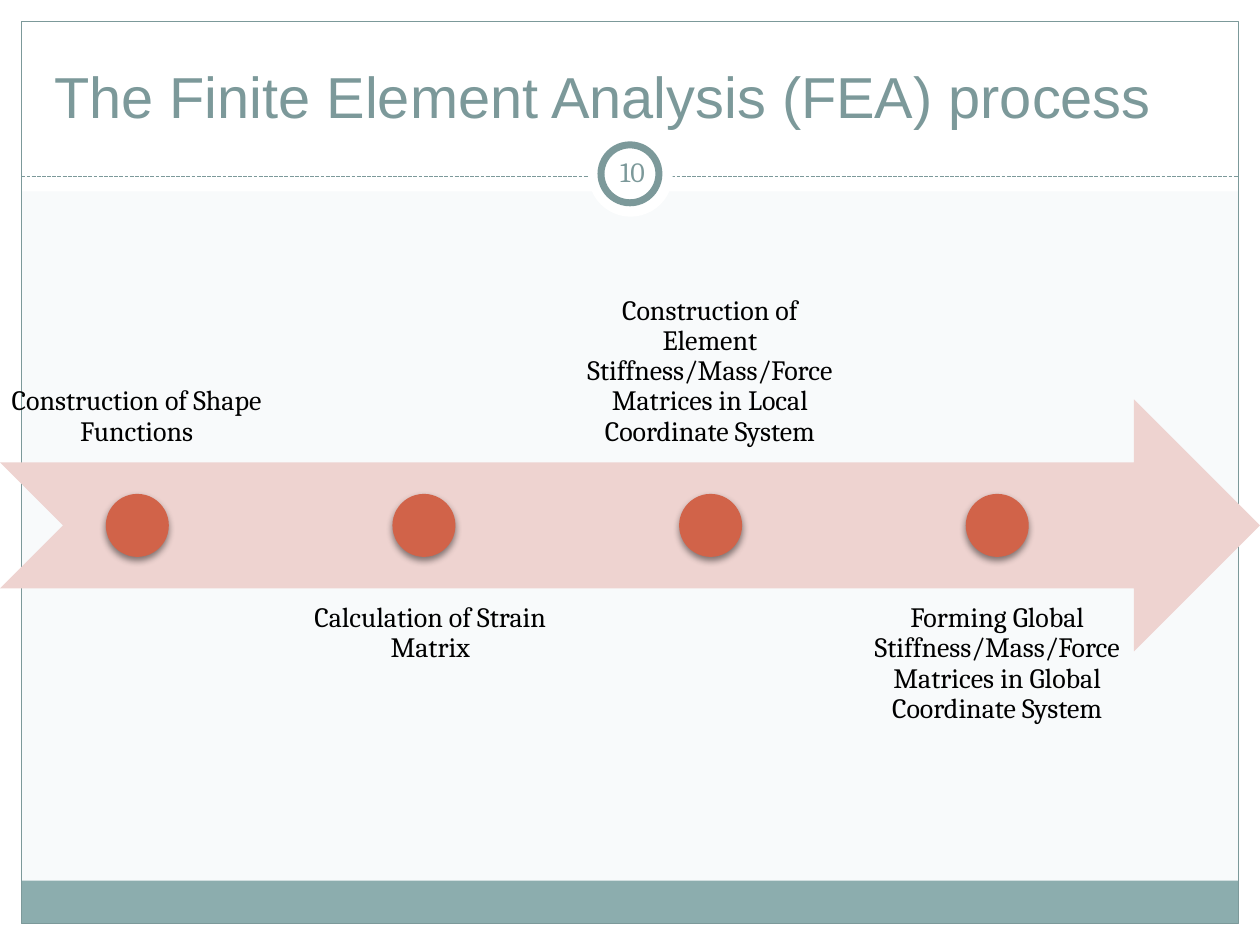
import pptx
import pptx.util
import pptx.dml.color
import pptx.enum.dml
import pptx.enum.shapes
import pptx.enum.text
import pptx.oxml
import pptx.oxml.ns
import lxml.etree

Inches = pptx.util.Inches
Pt = pptx.util.Pt
SHAPE = pptx.enum.shapes.MSO_SHAPE
ANCHOR = pptx.enum.text.MSO_ANCHOR
ALIGN = pptx.enum.text.PP_ALIGN
qn = pptx.oxml.ns.qn

COLORS = {
    "background": "F8FAFB",
    "white": "FFFFFF",
    "footer": "8CADAE",
    "accent": "7C999A",
    "arrow": "EED3D0",
    "dot": "D16349",
    "text": "000000",
}

STEPS = [
    (0, "Construction of Shape Functions"),
    (2.33, "Calculation of Strain Matrix"),
    (4.55, "Construction of Element Stiffness/Mass/Force Matrices in Local Coordinate System"),
    (6.83, "Forming Global Stiffness/Mass/Force Matrices in Global Coordinate System"),
]


def rgb(name):
    return pptx.dml.color.RGBColor.from_string(COLORS[name])


def add_shape(shapes, kind, box, fill=None, line=None, width=0.75):
    sp = shapes.add_shape(kind, *map(Inches, box))
    sp.shadow.inherit = False
    if fill:
        sp.fill.solid()
        sp.fill.fore_color.rgb = rgb(fill)
    else:
        sp.fill.background()
    if line:
        sp.line.color.rgb = rgb(line)
        sp.line.width = Pt(width)
    else:
        sp.line.fill.background()
    return sp


def add_run(p, text, size, font, color):
    r = p.add_run()
    r.text = text
    r.font.size = Pt(size)
    r.font.name = font
    r.font.color.rgb = rgb(color)


def add_text(shapes, box, text, color, anchor, insets):
    tf = shapes.add_textbox(*map(Inches, box)).text_frame
    tf.word_wrap = True
    tf.vertical_anchor = anchor
    tf.margin_left, tf.margin_top, tf.margin_right, tf.margin_bottom = map(Inches, insets)
    p = tf.paragraphs[0]
    p.alignment = ALIGN.CENTER
    add_run(p, text, 16, "Cambria", color)
    return p


def add_drop_shadow(sp):
    effects = sp._element.spPr.find(qn("a:effectLst"))
    shadow = lxml.etree.SubElement(
        effects, qn("a:outerShdw"), blurRad=str(Pt(4)), dist=str(Pt(2)),
        dir="5400000", rotWithShape="0")
    color = lxml.etree.SubElement(shadow, qn("a:srgbClr"), val=COLORS["text"])
    lxml.etree.SubElement(color, qn("a:alpha"), val="45000")


def build_frame(s, width, height):
    margin = 0.17
    right, bottom = width - margin, height - margin
    inner = width - 2 * margin
    for box in [(0, bottom, width, margin), (0, 0, width, 1.52),
                (0, 0, margin, height), (right, 0, margin, height)]:
        add_shape(s.shapes, SHAPE.RECTANGLE, box, "white")
    add_shape(s.shapes, SHAPE.RECTANGLE, (margin, 6.99, inner, 0.34), "footer")
    add_shape(s.shapes, SHAPE.RECTANGLE, (margin, margin, inner, bottom - margin), line="accent")
    rule = s.shapes.add_connector(
        pptx.enum.shapes.MSO_CONNECTOR.STRAIGHT,
        Inches(margin), Inches(1.4), Inches(right), Inches(1.4))
    rule.line.color.rgb = rgb("accent")
    rule.line.width = Pt(0.75)
    rule.line.dash_style = pptx.enum.dml.MSO_LINE.SQUARE_DOT
    lxml.etree.SubElement(rule._element.spPr, qn("a:effectLst"))


def build_title(s, box, text):
    title = s.shapes.title
    title.left, title.top, title.width, title.height = map(Inches, box)
    s.shapes._spTree.append(title._element)
    tf = title.text_frame
    tf.word_wrap = True
    tf.auto_size = pptx.enum.text.MSO_AUTO_SIZE.NONE
    tf.vertical_anchor = ANCHOR.BOTTOM
    p = tf.paragraphs[0]
    p.alignment = ALIGN.LEFT
    add_run(p, text, 33, "Arial", "accent")


def build_page_badge(s, box, number):
    left, top, size = box
    add_shape(s.shapes, SHAPE.OVAL, (left, top, size, size), "white")
    ring = size - 0.21
    add_shape(s.shapes, SHAPE.OVAL, (left + 0.1, top + 0.1, ring, ring), "white", "accent", 4)
    add_text(s.shapes, (left + 0.1, top + 0.07, 0.5, 0.48), number, "accent",
             ANCHOR.MIDDLE, (0.05, 0.05, 0.05, 0.05))


def build_process(s, box, steps):
    left, top, width, height = box
    band = height / 3
    dot = band / 4
    pitch = 2.275
    group = s.shapes.add_group_shape()
    add_shape(group.shapes, SHAPE.NOTCHED_RIGHT_ARROW, (left, top + band * 0.75, width, band), "arrow")
    for i, (x, text) in enumerate(steps):
        above = i % 2 == 0
        y = top - band * 0 if above else top + band * 1.5
        y = y if not above else top
        p = add_text(group.shapes, (left + x, y, 2.17, band), text, "text",
                     ANCHOR.BOTTOM if above else ANCHOR.TOP,
                     (0, 0, 0, 0.12) if above else (0, 0.12, 0, 0))
        p.line_spacing = 0.9
        p.space_after = Pt(5.6)
        dot_box = (left + 0.84 + pitch * i, top + band * 1.125, dot, dot)
        add_drop_shadow(add_shape(group.shapes, SHAPE.OVAL, dot_box, "dot"))


def main():
    prs = pptx.Presentation()
    prs.slide_width, prs.slide_height = Inches(10), Inches(7.5)
    s = prs.slides.add_slide(prs.slide_layouts[5])
    s.background.fill.solid()
    s.background.fill.fore_color.rgb = rgb("background")
    build_frame(s, 10, 7.5)
    build_title(s, (0.33, 0.25, 9.33, 0.83), "The Finite Element Analysis (FEA) process")
    build_page_badge(s, (4.67, 1.05, 0.67), "10")
    build_process(s, (0, 1.67, 10, 6), STEPS)
    prs.save("out.pptx")


if __name__ == "__main__":
    main()
